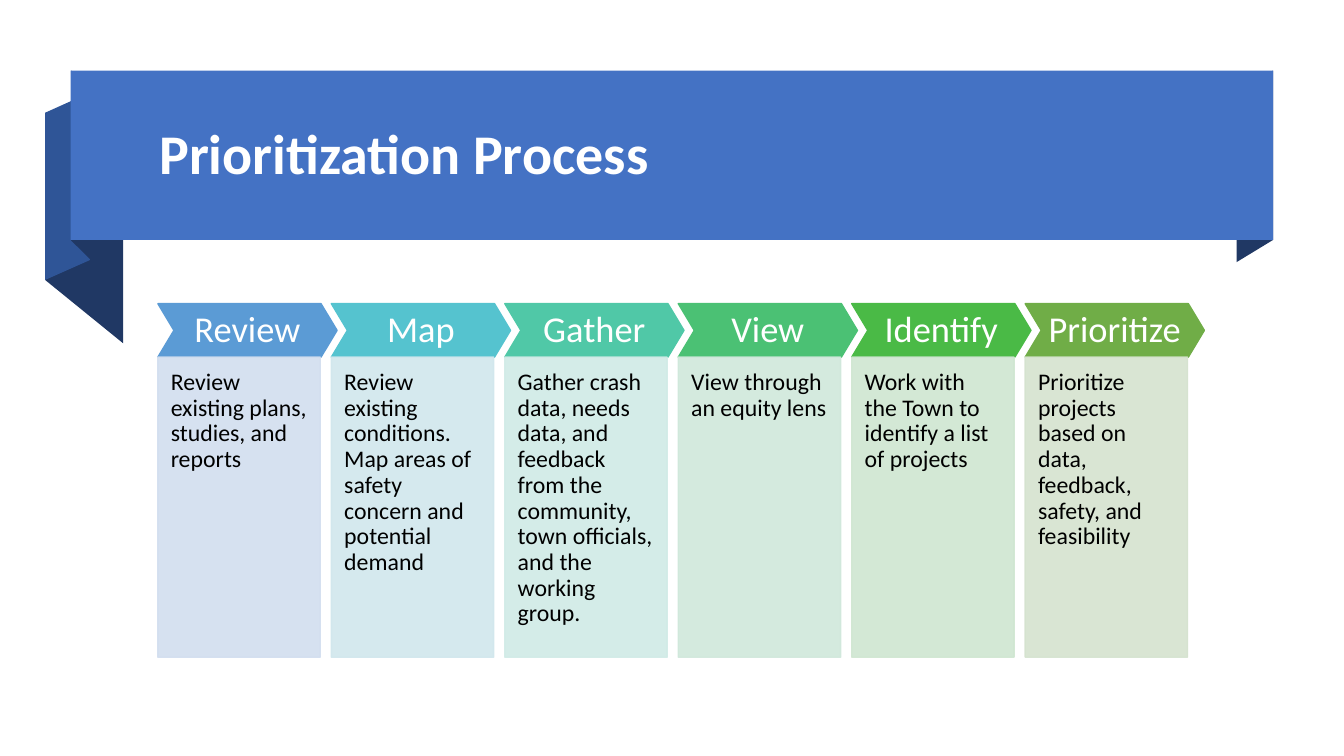
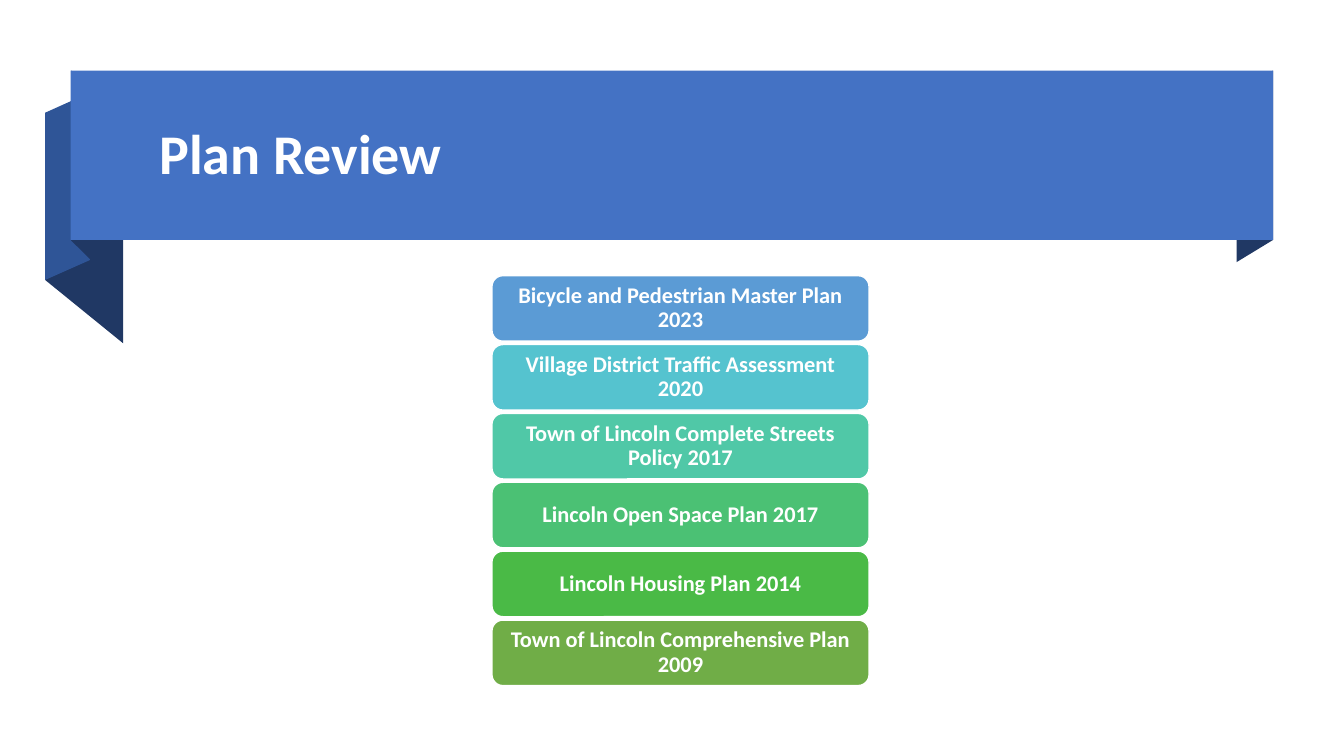
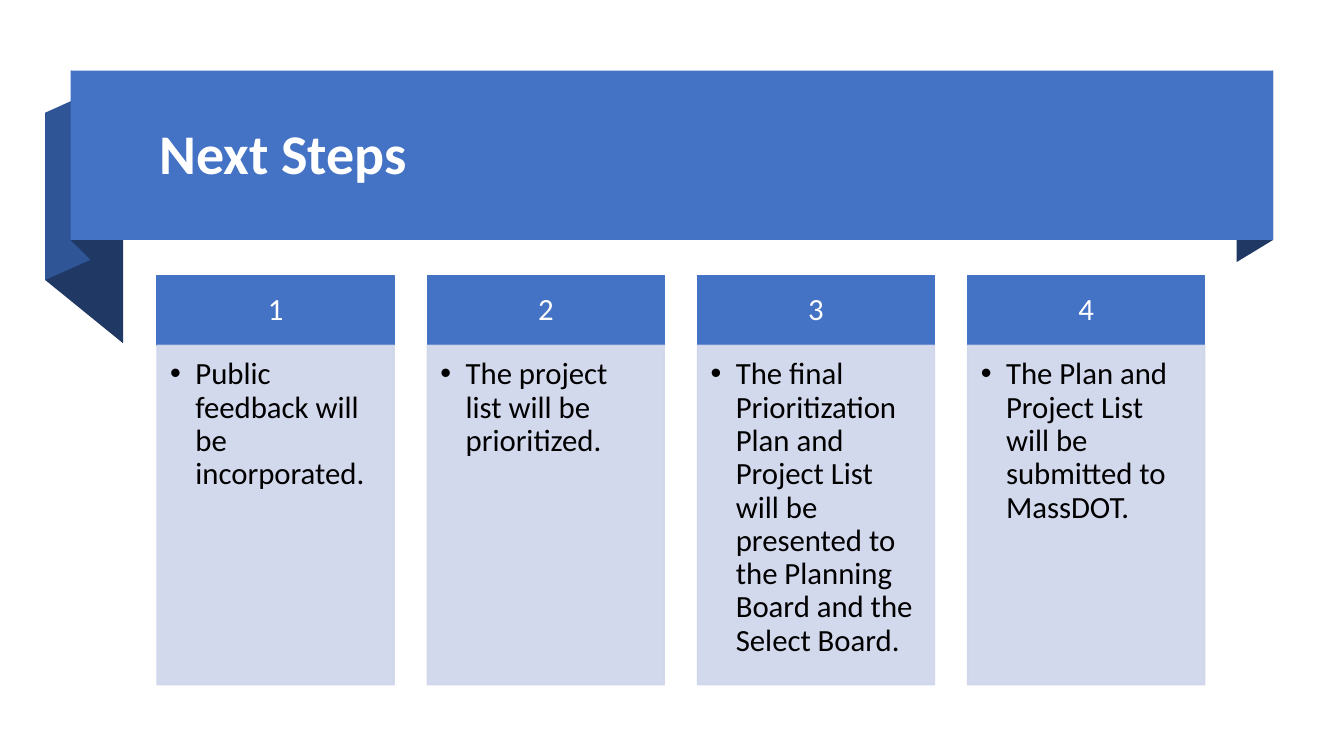
from lxml.etree import SubElement
from pptx import Presentation
from pptx.dml.color import RGBColor
from pptx.enum.shapes import MSO_SHAPE
from pptx.enum.text import MSO_ANCHOR, MSO_AUTO_SIZE, PP_ALIGN
from pptx.oxml.ns import qn
from pptx.util import Pt

FONT = "Calibri"
COLORS = {
    "white": "FFFFFF",
    "black": "000000",
    "banner": "4472C4",
    "fold": "203864",
    "tail": "2F5597",
    "step_body": "CFD5EA",
}
ACCENTS = ["5B9BD5", "55C3CF", "50C8A7", "4BC174", "4ABA46", "70AD47"]
TINTS = ["D2DEEF", "D1E7ED", "D0EBE6", "D0E8DB", "CFE6D1", "D5E3CF"]

RIBBON_FOLDS = [
    ("fold", [(909.4, 171.4), (883.4, 187.2), (883.4, 65.5), (909.4, 50.4)]),
    ("fold", [(88, 245.3), (32.2, 200), (32.2, 80.6), (88, 126)]),
    ("tail", [(64.2, 185.8), (32.2, 200), (32.2, 80.6), (64.2, 66.2)]),
    ("fold", [(64.2, 185), (50.8, 171.8), (50.8, 50.4), (64.2, 64)]),
]

PROCESS = [
    ("Review", "Review existing plans, studies, and reports"),
    ("Map", "Review existing conditions. Map areas of safety concern and potential demand"),
    ("Gather", "Gather crash data, needs data, and feedback from the community, "
               "town officials, and the working group."),
    ("View", "View through an equity lens"),
    ("Identify", "Work with the Town to identify a list of projects"),
    ("Prioritize", "Prioritize projects based on data, feedback, safety, and feasibility"),
]
PLANS = [
    "Bicycle and Pedestrian Master Plan 2023",
    "Village District Traffic Assessment 2020",
    "Town of Lincoln Complete Streets Policy 2017",
    "Lincoln Open Space Plan 2017",
    "Lincoln Housing Plan 2014",
    "Town of Lincoln Comprehensive Plan 2009",
]
STEPS = [
    "Public feedback will be incorporated.",
    "The project list will be prioritized.",
    "The final Prioritization Plan and Project List will be presented "
    "to the Planning Board and the Select Board.",
    "The Plan and Project List will be submitted to MassDOT.",
]


def paint(shape, fill, line=None):
    shape.shadow.inherit = False
    shape.fill.solid()
    shape.fill.fore_color.rgb = RGBColor.from_string(fill)
    if line:
        shape.line.color.rgb = RGBColor.from_string(line)
        shape.line.width = Pt(1)
    else:
        shape.line.fill.background()


def make_translucent(shape, percent):
    for color in shape.element.spPr.iter(qn("a:srgbClr")):
        SubElement(color, qn("a:alpha"), val=str(percent * 1000))


def write(shape, text, size, color, align, anchor, margins, bold=False):
    frame = shape.text_frame
    frame.word_wrap = True
    frame.auto_size = MSO_AUTO_SIZE.NONE
    frame.vertical_anchor = anchor
    frame.margin_left, frame.margin_top, frame.margin_right, frame.margin_bottom = map(Pt, margins)
    frame.text = text
    paragraph = frame.paragraphs[0]
    paragraph.alignment = align
    paragraph.line_spacing = 0.9
    paragraph.font.name = FONT
    paragraph.font.size = Pt(size)
    paragraph.font.bold = bold
    paragraph.font.color.rgb = RGBColor.from_string(COLORS[color])
    return paragraph


def add_block(slide, kind, box, fill, line):
    block = slide.shapes.add_shape(kind, *map(Pt, box))
    paint(block, fill, line)
    return block


def add_header(slide, kind, box, fill, text, size, line=None, margins=(0, 0, 0, 0), bold=False):
    header = add_block(slide, kind, box, fill, line or fill)
    write(header, text, size, "white", PP_ALIGN.CENTER, MSO_ANCHOR.MIDDLE, margins, bold)
    return header


def add_panel(slide, box, fill, text, size, margins):
    panel = add_block(slide, MSO_SHAPE.RECTANGLE, box, fill, fill)
    make_translucent(panel, 90)
    return write(panel, text, size, "black", PP_ALIGN.LEFT, MSO_ANCHOR.TOP, margins)


def add_bullet(paragraph, indent):
    properties = paragraph._p.get_or_add_pPr()
    properties.set("marL", str(Pt(indent)))
    properties.set("indent", str(-Pt(indent)))
    SubElement(properties, qn("a:buFont"), typeface="Arial")
    SubElement(properties, qn("a:buChar"), char="•")


def add_ribbon(slide):
    for color, corners in RIBBON_FOLDS:
        points = [(Pt(x), Pt(y)) for x, y in corners]
        outline = slide.shapes.build_freeform(*points[0])
        outline.add_line_segments(points[1:], close=True)
        paint(outline.convert_to_shape(), COLORS[color])
    add_block(slide, MSO_SHAPE.RECTANGLE, (50.4, 50.4, 859, 121), COLORS["banner"], None)


def add_titled_slide(deck, text):
    slide = deck.slides.add_slide(deck.slide_layouts[5])
    add_ribbon(slide)
    title = slide.shapes.title
    title.left, title.top, title.width, title.height = map(Pt, (106.6, 59.8, 787.7, 104.4))
    write(title, text, 40, "white", PP_ALIGN.LEFT, MSO_ANCHOR.MIDDLE, (7.2, 3.6, 7.2, 3.6), True)
    title.element.getparent().append(title.element)
    return slide


def build_process(deck):
    slide = add_titled_slide(deck, "Prioritization Process")
    for index, ((stage, detail), accent, tint) in enumerate(zip(PROCESS, ACCENTS, TINTS)):
        left = 112.8 + 123.9 * index
        chevron = add_header(slide, MSO_SHAPE.CHEVRON, (left, 216.9, 128, 38.2), accent, stage, 26)
        chevron.adjustments[0] = 0.3
        add_panel(slide, (left, 255.1, 116, 214.4), tint, detail, 17, (9.2, 9.2, 9.2, 18))


def build_plans(deck):
    slide = add_titled_slide(deck, "Plan Review")
    for index, (plan, accent) in enumerate(zip(PLANS, ACCENTS)):
        add_header(slide, MSO_SHAPE.ROUNDED_RECTANGLE, (351.4, 196.9 + 49.2 * index, 269.4, 46.8),
                   accent, plan, 16, COLORS["white"], (4.8, 2.4, 4.8, 2.4), True)


def build_steps(deck):
    slide = add_titled_slide(deck, "Next Steps")
    for index, step in enumerate(STEPS):
        left = 112.2 + 193 * index
        add_header(slide, MSO_SHAPE.RECTANGLE, (left, 197, 169.3, 49.6), COLORS["banner"],
                   str(index + 1), 22)
        detail = add_panel(slide, (left, 246.6, 169.3, 242.6), COLORS["step_body"], step, 22,
                           (9.4, 9.4, 12.5, 14))
        add_bullet(detail, 18)


def main():
    deck = Presentation()
    deck.slide_width, deck.slide_height = Pt(960), Pt(540)
    build_process(deck)
    build_plans(deck)
    build_steps(deck)
    deck.save("out.pptx")


if __name__ == "__main__":
    main()
